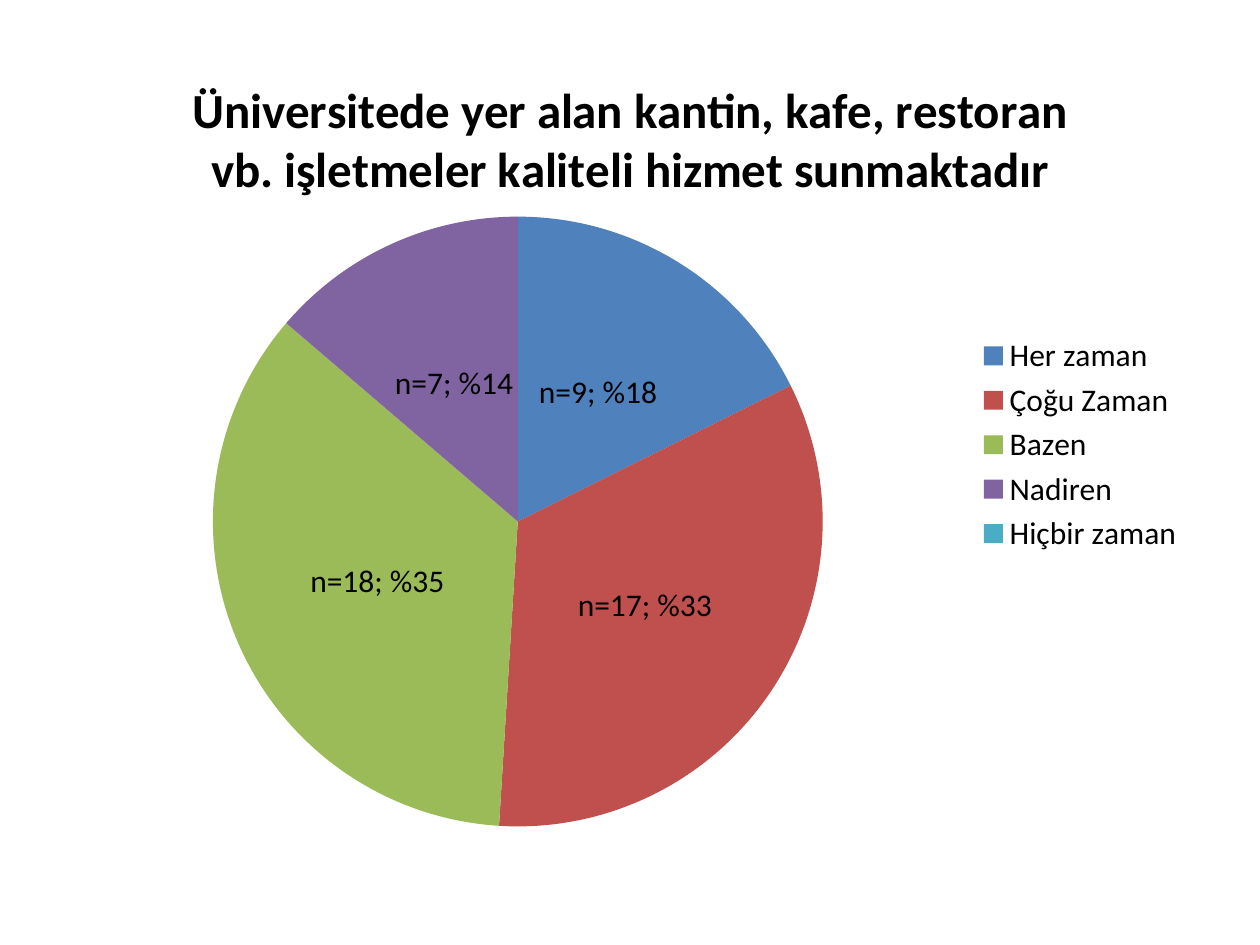
"""Build a one-slide survey result with a labelled pie chart."""
from pptx import Presentation
from pptx import util as u
from pptx.chart import data as chart_data
from pptx.dml import color
from pptx.enum import chart as ch
from pptx.oxml import parse_xml
from pptx.oxml import ns

FONT = "Calibri"
COLORS = {
    "text": "000000",
    "Her zaman": "4F81BD",
    "Çoğu Zaman": "C0504D",
    "Bazen": "9BBB59",
    "Nadiren": "8064A2",
    "Hiçbir zaman": "4BACC6",
}
QUESTION = ("Üniversitede yer alan kantin, kafe, restoran vb. işletmeler "
            "kaliteli hizmet sunmaktadır")
ANSWERS = {"Her zaman": 9, "Çoğu Zaman": 17, "Bazen": 18, "Nadiren": 7,
           "Hiçbir zaman": None}


def style_font(font, size, bold=False):
    """Apply the slide's typeface and text colour."""
    font.name = FONT
    font.size = u.Pt(size)
    font.bold = bold
    font.color.rgb = color.RGBColor.from_string(COLORS["text"])


def place_plot(chart, left, top, size):
    """Fix a square plot area, with lengths in inches inside the 9 by 6.34 box."""
    plot_area = chart.element.xpath("c:chart/c:plotArea")[0]
    for layout in plot_area.xpath("c:layout"):
        plot_area.remove(layout)
    fractions = {"x": left / 9, "y": top / 6.34, "w": size / 9, "h": size / 6.34}
    sizes = "".join(f'<c:{tag} val="{value:.4f}"/>'
                    for tag, value in fractions.items())
    plot_area.insert(0, parse_xml(
        f'<c:layout {ns.nsdecls("c")}><c:manualLayout>'
        '<c:layoutTarget val="inner"/><c:xMode val="edge"/>'
        f'<c:yMode val="edge"/>{sizes}</c:manualLayout></c:layout>'))


def add_title(chart):
    """Write the survey question above the pie."""
    chart.has_title = True
    heading = chart.chart_title.text_frame.paragraphs[0]
    style_font(heading.font, 28, bold=True)
    question = heading.add_run()
    question.text = QUESTION
    style_font(question.font, 28, bold=True)
    chart.chart_title.include_in_layout = False


def add_legend(chart):
    """List the answers to the right of the pie."""
    chart.has_legend = True
    chart.legend.position = ch.XL_LEGEND_POSITION.RIGHT
    chart.legend.include_in_layout = False
    style_font(chart.legend.font, 18)


def format_slices(answer_series):
    """Colour each slice and label it with its count and share."""
    labels = answer_series.data_labels
    labels.show_value = True
    labels.show_percentage = True
    labels.position = ch.XL_LABEL_POSITION.CENTER
    style_font(labels.font, 18)
    total = sum(count for count in ANSWERS.values() if count)
    for index, (answer, count) in enumerate(ANSWERS.items()):
        point = answer_series.points[index]
        point.format.fill.solid()
        point.format.fill.fore_color.rgb = color.RGBColor.from_string(COLORS[answer])
        if count:
            share = point.data_label.text_frame.paragraphs[0].add_run()
            share.text = f"n={count}; %{round(100 * count / total)}"
            style_font(share.font, 18)
            point.data_label.position = ch.XL_LABEL_POSITION.CENTER


def add_answer_pie(slide, left, top, width, height):
    """Place the answer pie with its title and legend in the given box."""
    answers = chart_data.CategoryChartData()
    answers.categories = list(ANSWERS)
    answers.add_series(QUESTION, list(ANSWERS.values()))
    chart = slide.shapes.add_chart(ch.XL_CHART_TYPE.PIE, left, top, width,
                                   height, answers).chart
    style_font(chart.font, 18)
    add_title(chart)
    add_legend(chart)
    chart.plots[0].vary_by_categories = True
    format_slices(chart.plots[0].series[0])
    place_plot(chart, 1.19, 1.36, 4.84)


def main():
    """Create and save the presentation."""
    deck = Presentation()
    deck.slide_width, deck.slide_height = u.Inches(10), u.Inches(7.5)
    slide = deck.slides.add_slide(deck.slide_layouts[6])
    add_answer_pie(slide, u.Inches(0.5), u.Inches(0.36), u.Inches(9), u.Inches(6.34))
    deck.save("out.pptx")


if __name__ == "__main__":
    main()
